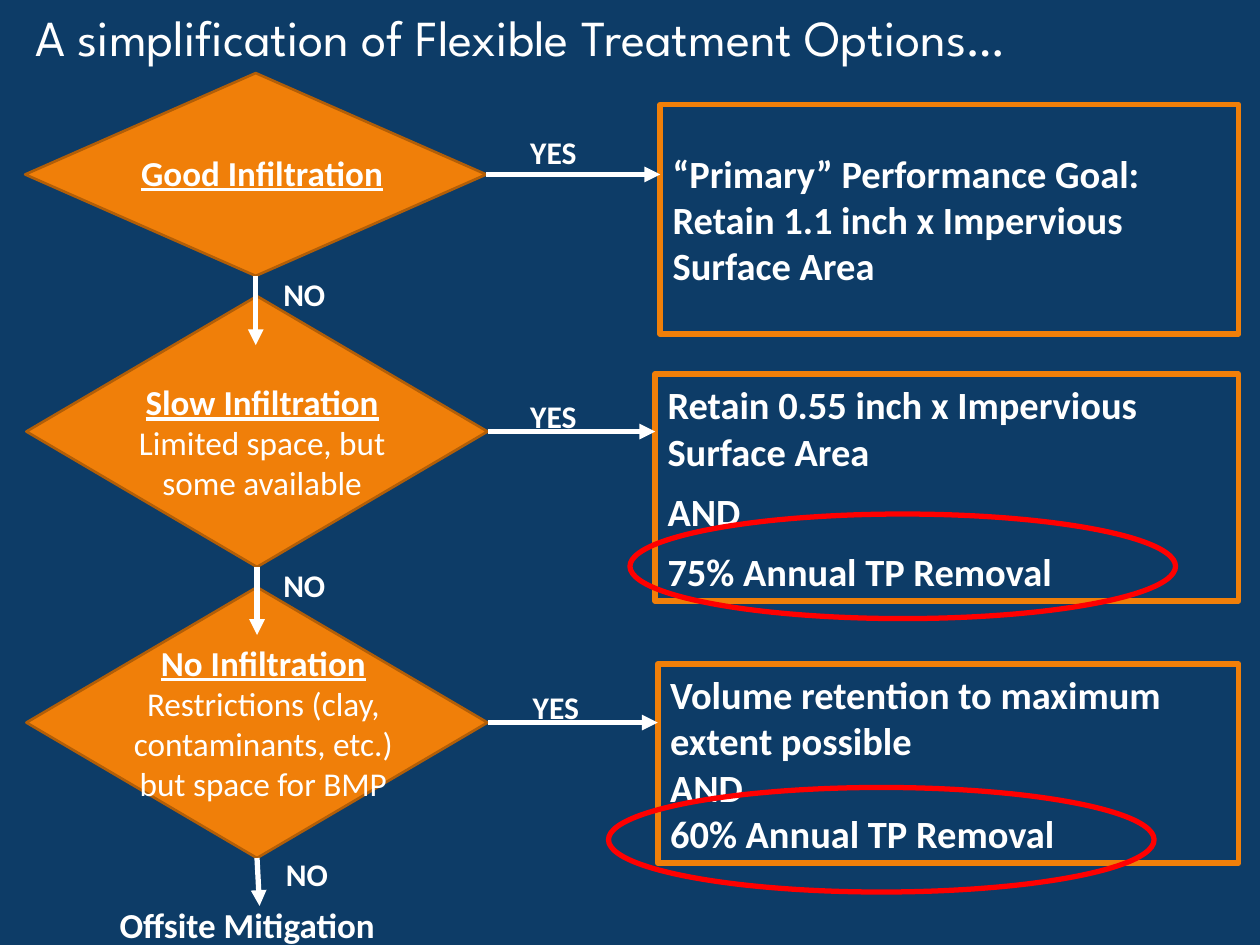
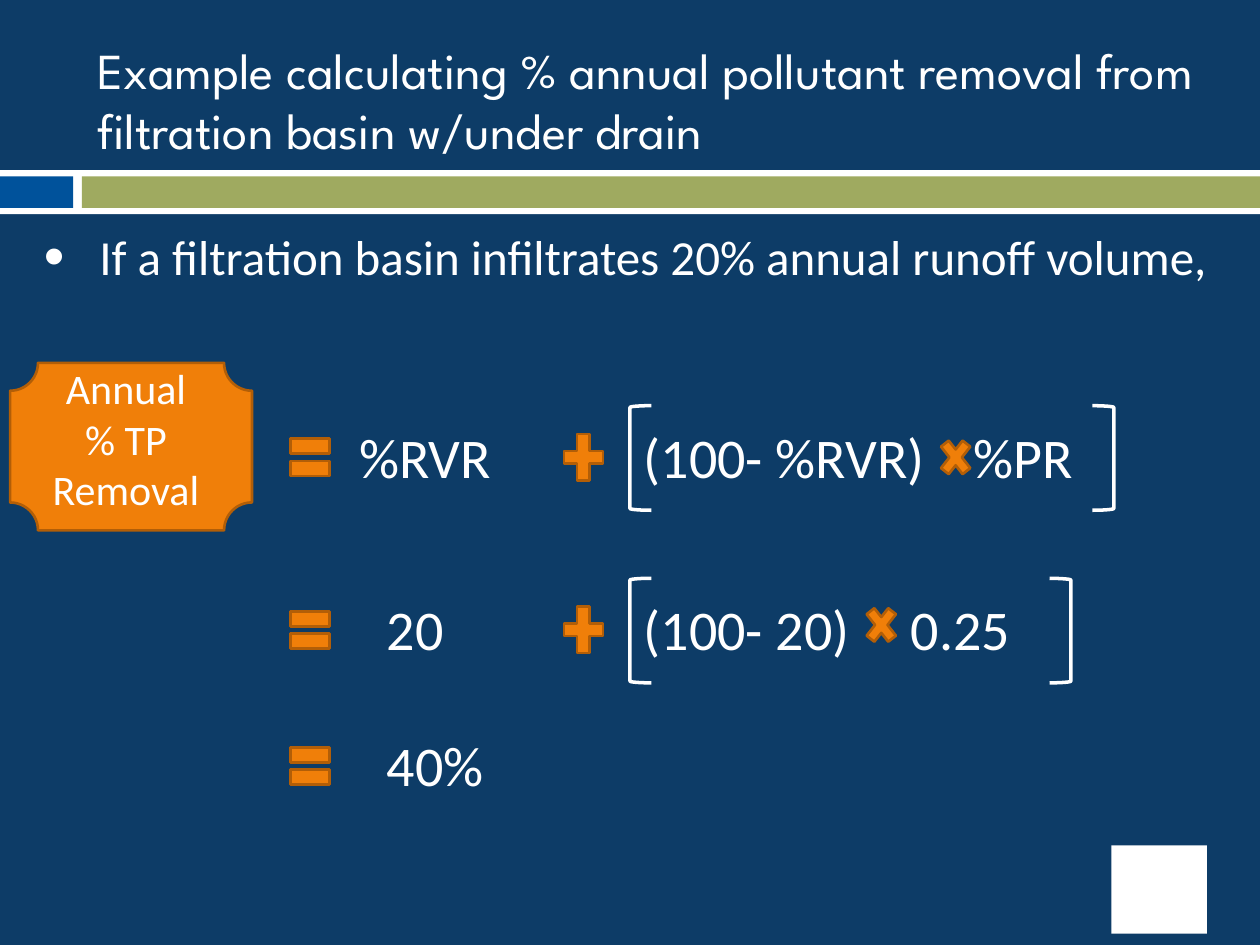
"""Build two slides on flexible stormwater treatment options."""
from pptx import Presentation
from pptx.dml.color import RGBColor as Rgb
from pptx.enum.shapes import MSO_CONNECTOR as Conn, MSO_SHAPE as Kind
from pptx.enum.text import MSO_ANCHOR as Anchor, MSO_AUTO_SIZE as Fit, PP_ALIGN as Align
from pptx.oxml.ns import qn
from pptx.util import Inches, Pt
from lxml.etree import SubElement as Sub

HUES = {
    "navy": "0D3C67", "white": "FFFFFF", "gold": "F07F09", "rust": "B25E07",
    "red": "FF0000", "blue": "00529B", "green": "9FAA60",
}
HUE = {name: Rgb.from_string(code) for name, code in HUES.items()}


def put(slide, kind, box, fill=None, line=None, width=1.5):
    """Add a preset shape without shadow."""
    shape = slide.shapes.add_shape(kind, *map(Inches, box))
    shape.shadow.inherit = False
    if fill:
        shape.fill.solid()
        shape.fill.fore_color.rgb = HUE[fill]
    else:
        shape.fill.background()
    if line:
        shape.line.color.rgb = HUE[line]
        shape.line.width = Pt(width)
    else:
        shape.line.fill.background()
    return shape


def write(shape, lines, size, bold=False, under=False, align=Align.LEFT, face="Calibri"):
    """Add lines of white text, one paragraph each."""
    frame = shape.text_frame
    frame.word_wrap = True
    frame.auto_size = Fit.NONE
    for i, text in enumerate(lines):
        para = frame.add_paragraph() if frame.text else frame.paragraphs[0]
        para.alignment = align
        run = para.add_run()
        run.text = text
        font = run.font
        font.name, font.size, font.bold, font.underline = face, Pt(size), bold, under
        font.color.rgb = HUE["white"]
    return frame


prs = Presentation()
prs.slide_width, prs.slide_height = Inches(10), Inches(7.5)
back = prs.slide_master.background.fill
back.solid()
back.fore_color.rgb = HUE["navy"]

heads = [
    ("A simplification of Flexible Treatment Options…", (0.18, -0.25, 9.65, 1.08)),
    ("Example calculating % annual pollutant removal from filtration basin w/under drain",
     (0.67, 0.25, 8.92, 1.08)),
]
pages = []
for text, box in heads:
    page = prs.slides.add_slide(prs.slide_layouts[5])
    title = page.shapes.title
    title.left, title.top, title.width, title.height = map(Inches, box)
    write(title, [text], 28.8, face="League Spartan").vertical_anchor = Anchor.MIDDLE
    pages.append(page)
flow, calc = pages

steps = [
    dict(gem=(0.2, 0.58, 3.66, 1.61), name="Good Infiltration", note=[],
         text=(0.94, 1.15, 2.28, 0.4), yes=(4.11, 1.01), no=(2.15, 2.13), down=(2.03, 2.74),
         goal=(5.24, 0.83, 4.59, 1.82), gap=1,
         lines=["“Primary” Performance Goal:", "Retain 1.1 inch x Impervious Surface Area"]),
    dict(gem=(0.21, 2.35, 3.66, 2.15), name="Slow Infiltration",
         note=["Limited space, but some available"],
         text=(0.94, 2.97, 2.28, 0.99), yes=(4.11, 3.1), no=(2.15, 4.44), down=(2.04, 5.04),
         goal=(5.2, 2.97, 4.63, 1.8), gap=1.3,
         lines=["Retain 0.55 inch x Impervious Surface Area", "AND", "75% Annual TP Removal"]),
    dict(gem=(0.21, 4.66, 3.66, 2.15), name="No Infiltration",
         note=["Restrictions (clay, contaminants, etc.) but space for BMP"],
         text=(0.85, 5.04, 2.48, 1.4), yes=(4.13, 5.41), no=(2.17, 6.74), down=(2.06, 7.19),
         goal=(5.22, 5.27, 4.61, 1.58), gap=1,
         lines=["Volume retention to maximum extent possible", "AND", "60% Annual TP Removal"]),
]
gems = [put(flow, Kind.FLOWCHART_DECISION, step["gem"], "gold", "rust") for step in steps]

for gem, step in zip(gems, steps):
    goal = put(flow, Kind.RECTANGLE, step["goal"], None, "gold", 3.25)
    frame = write(goal, step["lines"], 22, True)
    frame.vertical_anchor = Anchor.MIDDLE
    for para in frame.paragraphs[1:]:
        para.line_spacing = step["gap"]

    note = flow.shapes.add_textbox(*map(Inches, step["text"]))
    write(note, [step["name"]], 20, True, True, Align.CENTER)
    write(note, step["note"], 19, align=Align.CENTER)

    mid = step["gem"][1] + step["gem"][3] / 2
    for site, end in ((3, (step["goal"][0], mid)), (2, step["down"])):
        x, y = map(Inches, end)
        arrow = flow.shapes.add_connector(Conn.STRAIGHT, x, y, x, y)
        arrow.begin_connect(gem, site)
        arrow.line.color.rgb = HUE["white"]
        arrow.line.width = Pt(3)
        props = arrow.element.spPr
        Sub(props.find(qn("a:ln")), qn("a:tailEnd"), type="triangle")
        Sub(props, qn("a:effectLst"))

    for word, spot, wide in (("YES", step["yes"], 0.83), ("NO", step["no"], 0.6)):
        label = flow.shapes.add_textbox(*map(Inches, (*spot, wide, 0.37)))
        write(label, [word], 18, True)

last = flow.shapes.add_textbox(*map(Inches, (0.85, 7.12, 2.39, 0.4)))
write(last, ["Offsite Mitigation"], 20, True)
for spot in ((5, 4.08), (4.83, 6.25)):
    put(flow, Kind.OVAL, (*spot, 4.33, 0.83), None, "red", 3)

bands = [
    ((0, 1.35, 10, 0.35), "white"), ((0, 1.4, 0.58, 0.25), "blue"),
    ((0.65, 1.4, 9.35, 0.25), "green"), ((8.82, 6.71, 0.76, 0.7), "white"),
]
for box, hue in bands:
    put(calc, Kind.RECTANGLE, box, hue)

lead = calc.shapes.add_textbox(*map(Inches, (0.25, 1.75, 9.75, 0.7)))
para = lead.text_frame.paragraphs[0]
props = para._p.get_or_add_pPr()
props.set("marL", str(Inches(0.44)))
props.set("indent", str(Inches(-0.44)))
Sub(Sub(props, qn("a:buClr")), qn("a:srgbClr"), val=HUES["white"])
Sub(props, qn("a:buSzPct"), val="120000")
Sub(props, qn("a:buFont"), typeface="Arial")
Sub(props, qn("a:buChar"), char="•")
write(lead, ["If a filtration basin infiltrates 20% annual runoff volume,"], 28)

put(calc, Kind.PLAQUE, (0.08, 2.88, 1.92, 1.33), "gold", "rust")
tag = calc.shapes.add_textbox(*map(Inches, (0.04, 2.83, 1.92, 1.33)))
write(tag, ["Annual", "% TP", "Removal"], 24, align=Align.CENTER)

terms = [
    (3.3, 2.85, "%RVR"), (3.3, 5.11, "(100- %RVR)"), (3.3, 7.73, "%PR"),
    (4.67, 3.07, "20"), (4.67, 5.11, "(100- 20)"), (4.67, 7.23, "0.25"),
    (5.75, 3.07, "40%"),
]
for top, left, text in terms:
    term = calc.shapes.add_textbox(*map(Inches, (left, top, 2.4, 0.65)))
    write(term, [text], 32).margin_left = 0

for top in (3.38, 4.75, 5.83):
    put(calc, Kind.MATH_EQUAL, (2.25, top, 0.42, 0.5), "gold", "rust")
for top, left, sign, edge in ((3.38, 7.42, 3.42, 8.67), (4.75, 6.83, 4.75, 8.33)):
    put(calc, Kind.MATH_PLUS, (4.42, top, 0.42, 0.5), "gold", "rust")
    put(calc, Kind.MATH_MULTIPLY, (left, sign, 0.33, 0.42), "gold", "rust")
    for kind, x in ((Kind.LEFT_BRACKET, 5), (Kind.RIGHT_BRACKET, edge)):
        put(calc, kind, (x, top - 0.16, 0.17, 0.83), None, "white", 2)

prs.save("out.pptx")
